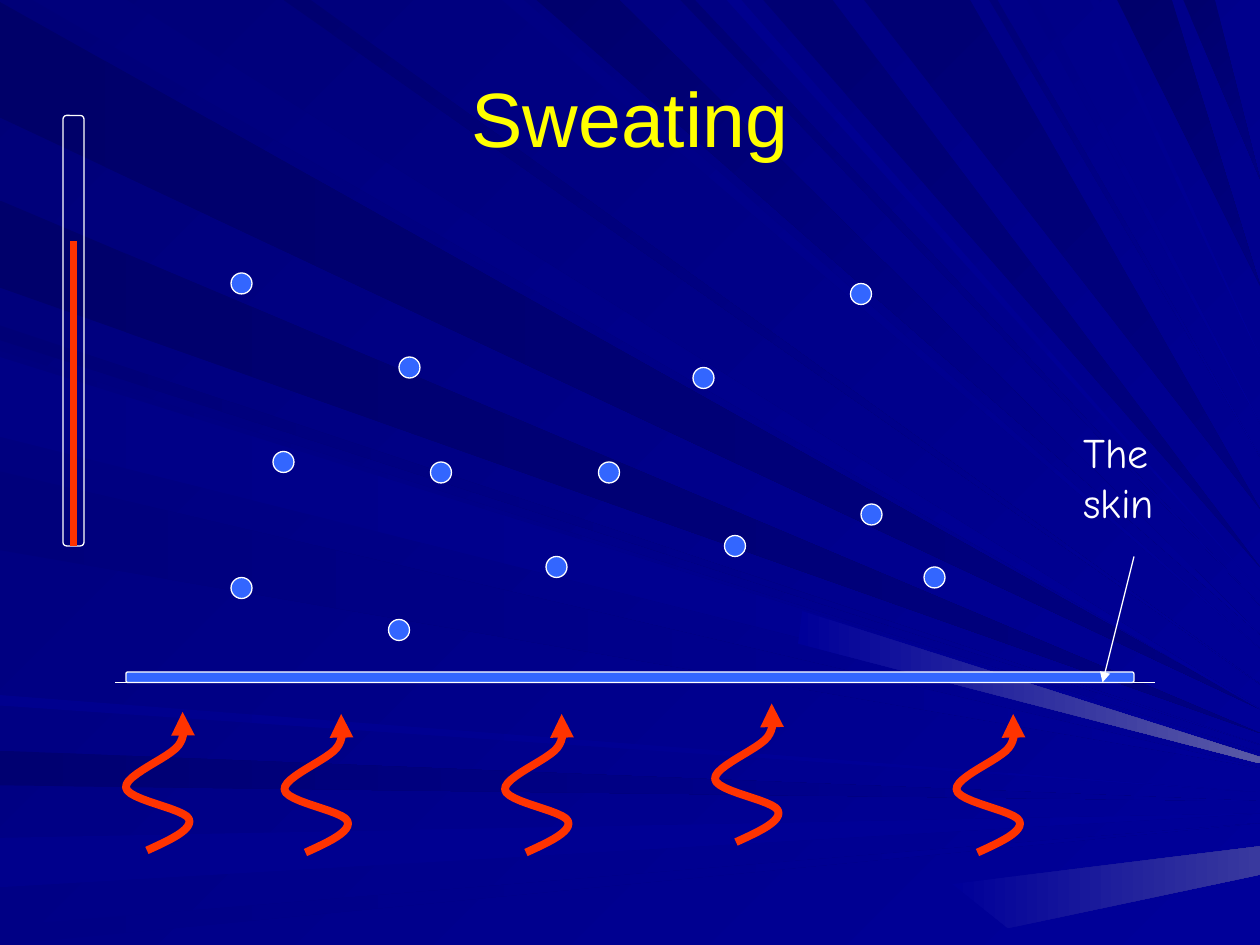
"""Build the Sweating slide: heat rising to the skin and sweat evaporating from it."""
from dataclasses import dataclass

from lxml.etree import SubElement
from pptx import Presentation
from pptx.dml.color import RGBColor
from pptx.enum.shapes import MSO_CONNECTOR, MSO_SHAPE
from pptx.enum.text import MSO_ANCHOR, PP_ALIGN
from pptx.oxml.ns import qn
from pptx.util import Pt

PX = 7620
WIDTH, HEIGHT = 1200, 900


@dataclass(frozen=True)
class Theme:
    background: tuple = ("000078", "000099")
    deep: str = "000080"
    bright: str = "000099"
    glow: str = "5A5AA6"
    patch: str = "39399E"
    title: str = "FFFF00"
    light: str = "FFFFFF"
    sweat: str = "3366FF"
    heat: str = "FF3300"
    title_font: str = "Arial"
    label_font: str = "Comic Neue"
    title_size: int = 44
    label_size: int = 24
    thin: float = 0.75
    thick: float = 4.5


THEME = Theme()
LEFT_RAYS = [
    (2, 112, "000069", THEME.deep), (715, 748, "000071", THEME.bright),
    (798, 845, "00008C", THEME.bright), (882, 900, "000085", THEME.bright),
    (310, 324, "000076", THEME.bright), (191, 274, "00006B", THEME.deep),
    (334, 410, "00007E", THEME.bright), (449, 524, "00007B", THEME.bright),
    (662, 672, "00008E", THEME.bright), (340, 416, "000085", THEME.bright),
]
TOP_RAYS = [
    (31, 121, "00007B", THEME.bright), (478, 499, "000083", THEME.bright),
    (511, 590, "00006D", THEME.bright), (648, 662, "000073", THEME.bright),
    (727, 793, "000073", THEME.deep), (1064, 1116, "00006B", THEME.deep),
    (1127, 1157, "00006D", THEME.deep), (270, 296, "000070", THEME.bright),
    (692, 706, "00008E", THEME.bright), (823, 924, "000073", THEME.deep),
    (942, 950, "000078", THEME.bright), (978, 989, "000085", THEME.bright),
    (1038, 1046, "00008A", THEME.bright),
]
GLOWS = [
    ([(760, 613), (764, 582), (1200, 721), (1200, 727)], THEME.glow),
    ([(907, 842), (1200, 806), (1200, 833), (960, 884)], THEME.patch),
]
HEAT_START = (21, 132)
HEAT_CURVES = [
    ((43, 122), (65, 112), (61, 102)),
    ((57, 92), (2, 84), (1, 72)),
    ((0, 60), (42, 44), (51, 32)),
    ((60, 20), (54, 6), (55, 0)),
]
HEAT_WAVES = [(119, 678), (270, 680), (480, 680), (680, 670), (910, 680)]
DROPS = [
    (220, 550), (370, 590), (220, 260), (810, 270), (690, 510), (380, 340), (260, 430),
    (520, 530), (880, 540), (410, 440), (570, 440), (660, 350), (820, 480),
]


def left_ray(start, end):
    middle = (start + end) / 2
    return [(0, start), (0, end), (WIDTH, 668 + 0.13 * middle)]


def top_ray(start, end):
    middle = (start + end) / 2
    return [(start, 0), (end, 0), (WIDTH, 805 * (WIDTH - middle) / (1416 - middle))]


def curve_points(start, curves, steps=12):
    points = [start]
    for first, second, end in curves:
        corners = (points[-1], first, second, end)
        for step in range(1, steps + 1):
            t = step / steps
            weights = ((1 - t) ** 3, 3 * t * (1 - t) ** 2, 3 * t**2 * (1 - t), t**3)
            points.append(tuple(sum(w * c[axis] for w, c in zip(weights, corners)) for axis in (0, 1)))
    return points


class SlideBuilder:
    def __init__(self, slide, theme):
        self.slide = slide
        self.shapes = slide.shapes
        self.theme = theme

    def paint(self, fill, start, end, angle=0):
        if start == end:
            fill.solid()
            fill.fore_color.rgb = RGBColor.from_string(start)
            return
        fill.gradient()
        fill.gradient_angle = -angle % 360
        for stop, color in zip(fill.gradient_stops, (start, end)):
            stop.color.rgb = RGBColor.from_string(color)

    def stroke(self, line, color, width, arrow=False):
        line.color.rgb = RGBColor.from_string(color)
        line.width = Pt(width)
        if arrow:
            SubElement(line.fill._xPr, qn("a:tailEnd"), type="triangle")

    def outline(self, points, close):
        corners = [(round(x * PX), round(y * PX)) for x, y in points]
        builder = self.shapes.build_freeform(*corners[0], scale=1.0)
        builder.add_line_segments(corners[1:], close=close)
        shape = builder.convert_to_shape()
        shape.shadow.inherit = False
        return shape

    def ray(self, points, start, end, angle=0):
        shape = self.outline(points, True)
        self.paint(shape.fill, start, end, angle)
        shape.line.fill.background()

    def heat_wave(self, left, top):
        points = [(left + x, top + y) for x, y in curve_points(HEAT_START, HEAT_CURVES)]
        shape = self.outline(points, False)
        shape.fill.background()
        self.stroke(shape.line, self.theme.heat, self.theme.thick, True)

    def shape(self, kind, box, fill=None):
        shape = self.shapes.add_shape(kind, *(length * PX for length in box))
        shape.shadow.inherit = False
        if fill:
            self.paint(shape.fill, fill, fill)
        else:
            shape.fill.background()
        self.stroke(shape.line, self.theme.light, self.theme.thin)
        return shape

    def line(self, ends, color, width, arrow=False):
        connector = self.shapes.add_connector(MSO_CONNECTOR.STRAIGHT, *(length * PX for length in ends))
        self.stroke(connector.line, color, width, arrow)
        SubElement(connector._element.spPr, qn("a:effectLst"))
        return connector

    def text(self, words, box, color, anchor, alignment, **font_values):
        frame = self.shapes.add_textbox(*(length * PX for length in box)).text_frame
        frame.word_wrap = True
        frame.vertical_anchor = anchor
        paragraph = frame.paragraphs[0]
        paragraph.text = words
        paragraph.alignment = alignment
        font = paragraph.runs[0].font
        for name, value in font_values.items():
            setattr(font, name, value)
        font.color.rgb = RGBColor.from_string(color)


def main():
    theme = THEME
    presentation = Presentation()
    presentation.slide_width, presentation.slide_height = WIDTH * PX, HEIGHT * PX
    builder = SlideBuilder(presentation.slides.add_slide(presentation.slide_layouts[6]), theme)
    builder.paint(builder.slide.background.fill, *theme.background, 45)
    for start, end, *colors in LEFT_RAYS:
        builder.ray(left_ray(start, end), *colors)
    for start, end, *colors in TOP_RAYS:
        builder.ray(top_ray(start, end), *colors, 45)
    for points, color in GLOWS:
        builder.ray(points, theme.bright, color)
    builder.text("Sweating", (60, 36, 1080, 150), theme.title, MSO_ANCHOR.MIDDLE, PP_ALIGN.CENTER,
                 name=theme.title_font, size=Pt(theme.title_size))
    builder.line((110, 650, 1100, 650), theme.light, theme.thin)
    skin = builder.shape(MSO_SHAPE.ROUNDED_RECTANGLE, (120, 640, 960, 10), theme.sweat)
    thermometer = builder.shape(MSO_SHAPE.ROUNDED_RECTANGLE, (60, 110, 20, 410))
    for bar in (skin, thermometer):
        bar.adjustments[0] = 0.17
    mercury = builder.line((70, 370, 70, 520), theme.heat, theme.thick)
    mercury.end_connect(thermometer, 2)
    builder.line((70, 230, 70, 372), theme.heat, theme.thick)
    for position in HEAT_WAVES:
        builder.heat_wave(*position)
    for position in DROPS:
        builder.shape(MSO_SHAPE.OVAL, (*position, 20, 20), theme.sweat)
    builder.text("The skin", (1020, 400, 160, 108), theme.light, MSO_ANCHOR.TOP, PP_ALIGN.LEFT,
                 name=theme.label_font, size=Pt(theme.label_size))
    builder.line((1080, 530, 1050, 650), theme.light, theme.thin, True)
    presentation.save("out.pptx")


if __name__ == "__main__":
    main()
